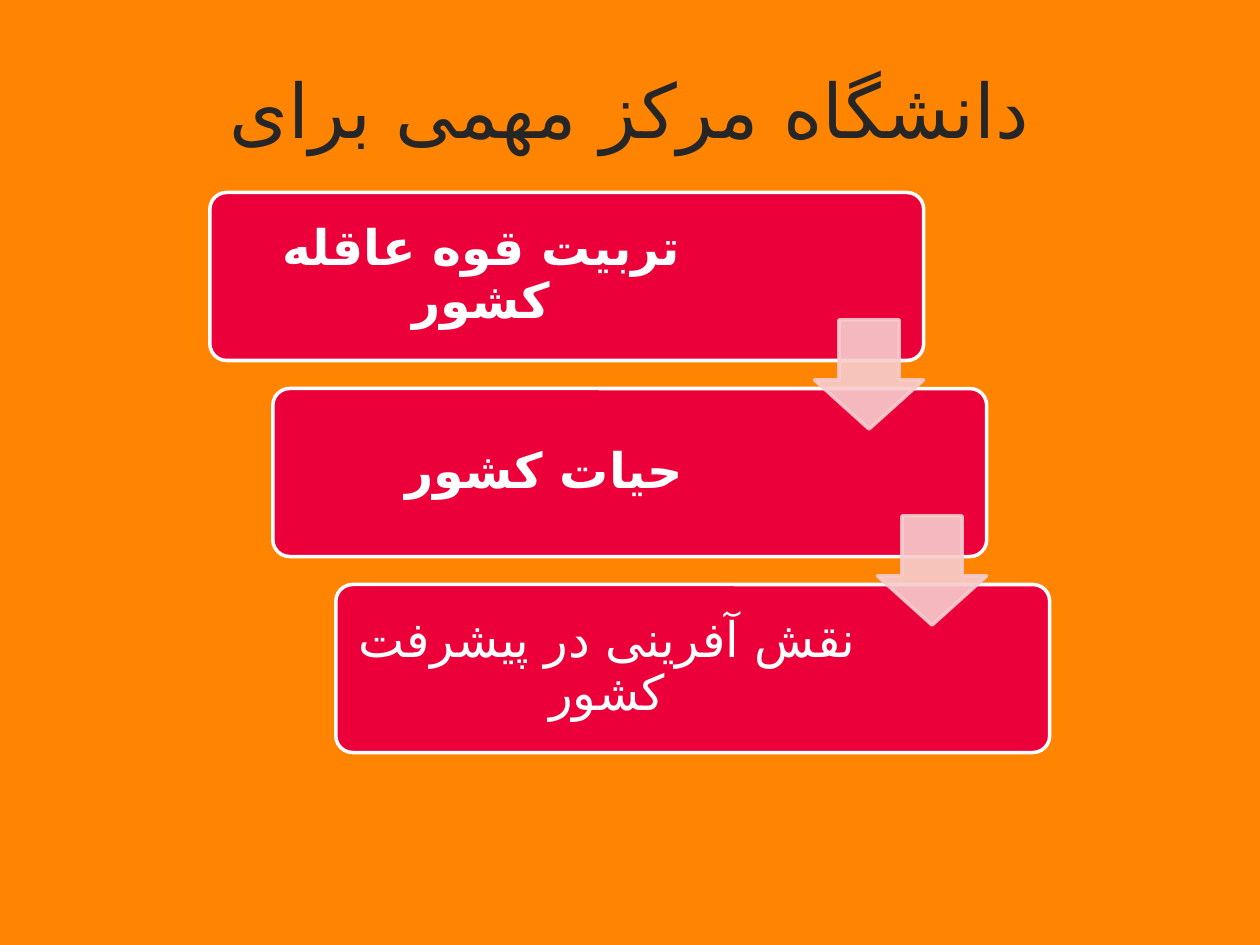
from lxml.etree import SubElement
from pptx import Presentation
from pptx.dml.color import RGBColor
from pptx.enum.shapes import MSO_SHAPE as SHAPE
from pptx.enum.text import MSO_ANCHOR as ANCHOR, PP_ALIGN as ALIGN
from pptx.oxml.ns import qn
from pptx.util import Cm, Pt

ORANGE = RGBColor(0xFF, 0x84, 0x02)
RED = RGBColor(0xEB, 0x00, 0x3A)
PINK = RGBColor(0xF7, 0xCC, 0xCE)
WHITE = RGBColor(0xFF, 0xFF, 0xFF)
DARK = RGBColor(0x26, 0x26, 0x26)
FONT = "Roboto"
PERSIAN_FONT = "DejaVu Sans"  # Roboto has no Persian letters

TITLE = "دانشگاه مرکز مهمی برای"
STEPS = [  # text, bold
    ("تربیت قوه عاقله کشور", True),
    ("حیات کشور", True),
    ("نقش آفرینی در پیشرفت کشور", False),
]


def write(sp, text, size, color, bold=False, inset=0):
    """Fill a shape with one centred right-to-left paragraph."""
    tf = sp.text_frame
    tf.word_wrap = True
    tf.vertical_anchor = ANCHOR.MIDDLE
    tf.margin_left = tf.margin_right = tf.margin_top = tf.margin_bottom = Cm(inset)
    p = tf.paragraphs[0]
    p.text = text
    p.alignment = ALIGN.CENTER
    p.font.name, p.font.size, p.font.bold = FONT, Pt(size), bold
    p.font.color.rgb = color
    # Reading direction and the font for Persian letters
    pPr = p._p.get_or_add_pPr()
    pPr.set("rtl", "1")
    SubElement(pPr.find(qn("a:defRPr")), qn("a:cs"), typeface=PERSIAN_FONT)
    return p


def add_figure(shapes, kind, box, adjustments, fill, line):
    sp = shapes.add_shape(kind, *map(Cm, box))
    for i, value in enumerate(adjustments):
        sp.adjustments[i] = value
    sp.shadow.inherit = False
    sp.fill.solid()
    sp.fill.fore_color.rgb = fill
    sp.line.color.rgb = line
    sp.line.width = Pt(2)
    return sp


def add_title(slide, left, top, width, height):
    sp = slide.shapes.title
    sp.left, sp.top, sp.width, sp.height = map(Cm, (left, top, width, height))
    write(sp, TITLE, 43, DARK)


def add_staircase(slide, left, top, width, height):
    """Boxes stepping down to the right, joined by arrows."""
    shapes = slide.shapes.add_group_shape().shapes
    box_w, box_h = 0.85 * width, 0.3 * height
    dx = (width - box_w) / (len(STEPS) - 1)
    dy = (height - box_h) / (len(STEPS) - 1)
    arrow = 0.65 * box_h
    corners = [(left + i * dx, top + i * dy) for i in range(len(STEPS))]

    # Boxes with their text clear of the arrows
    for (x, y), (text, bold) in zip(corners, STEPS):
        add_figure(shapes, SHAPE.ROUNDED_RECTANGLE, (x, y, box_w, box_h),
                   [0.1], RED, WHITE)
        tb = shapes.add_textbox(*map(Cm, (x, y, 0.76 * box_w, box_h)))
        p = write(tb, text, 28, WHITE, bold, inset=0.3)
        p.line_spacing = 0.9
        p.space_after = Pt(10)

    # Translucent arrows, centred on the gap between two boxes
    for x, y in corners[:-1]:
        middle = y + (box_h + dy) / 2
        sp = add_figure(shapes, SHAPE.DOWN_ARROW,
                        (x + box_w - arrow, middle - arrow / 2, arrow, arrow),
                        [0.55, 0.45], PINK, PINK)
        for color in sp._element.spPr.iter(qn("a:srgbClr")):
            SubElement(color, qn("a:alpha"), val="90000")


def main():
    prs = Presentation()
    prs.slide_width, prs.slide_height = Cm(25.4), Cm(19.05)
    slide = prs.slides.add_slide(prs.slide_layouts[5])
    slide.background.fill.solid()
    slide.background.fill.fore_color.rgb = ORANGE
    add_title(slide, 1.07, 1.27, 23.24, 1.83)
    add_staircase(slide, 4.23, 3.88, 16.93, 11.29)
    prs.save("out.pptx")


if __name__ == "__main__":
    main()
